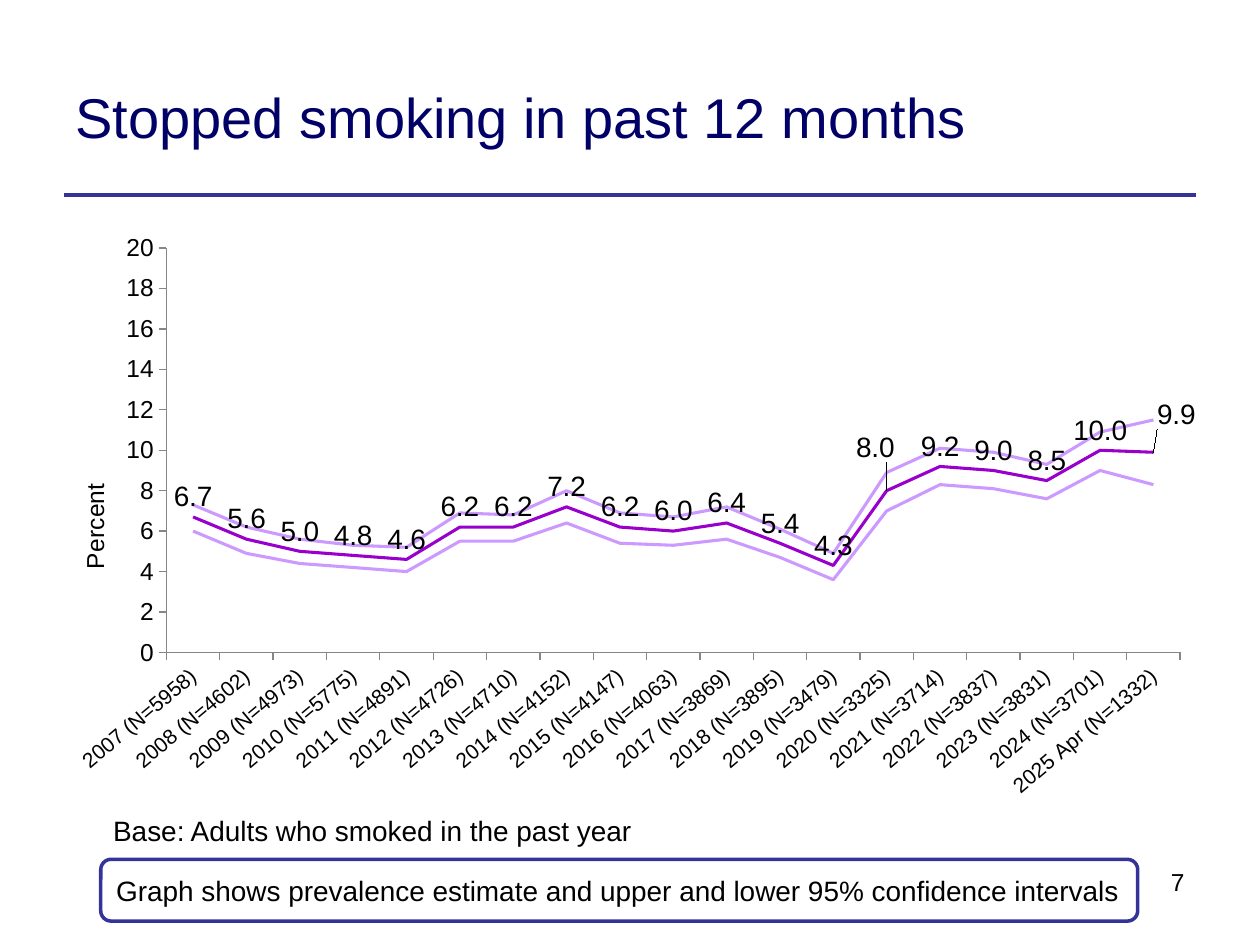
from lxml import etree
from pptx import Presentation
from pptx import util as u
from pptx.chart import data as chart_data
from pptx.dml import color
from pptx.enum import chart as charts, shapes, text
from pptx.oxml import ns

# Content
TITLE = "Stopped smoking in past 12 months"
BASE = "Base: Adults who smoked in the past year"
NOTE = "Graph shows prevalence estimate and upper and lower 95% confidence intervals"
PAGE = "7"
SAMPLES = [5958, 4602, 4973, 5775, 4891, 4726, 4710, 4152, 4147, 4063,
           3869, 3895, 3479, 3325, 3714, 3837, 3831, 3701, 1332]
ESTIMATE = [6.7, 5.6, 5, 4.8, 4.6, 6.2, 6.2, 7.2, 6.2, 6,
            6.4, 5.4, 4.3, 8, 9.2, 9, 8.5, 10, 9.9]
LOWER = [6, 4.9, 4.4, 4.2, 4, 5.5, 5.5, 6.4, 5.4, 5.3,
         5.6, 4.7, 3.6, 7, 8.3, 8.1, 7.6, 9, 8.3]
UPPER = [7.3, 6.2, 5.6, 5.3, 5.2, 6.9, 6.8, 8, 6.9, 6.7,
         7.2, 6.1, 4.9, 8.9, 10.1, 9.9, 9.3, 10.9, 11.5]
SERIES = [("Estimate", ESTIMATE, "estimate"), ("Lower limit", LOWER, "limit"),
          ("Upper limit", UPPER, "limit")]
# Labels nudged off the lines: point index -> share of chart width and height
NUDGED = {13: (-0.01, -0.04), 18: (0.02, -0.03)}

THEME = {
    "font": "Arial",
    "colors": {"title": "000066", "rule": "333399", "text": "000000", "paper": "FFFFFF",
               "estimate": "9900CC", "limit": "CC99FF", "axis": "868686"},
    "sizes": {"title": 32, "body": 16, "axis": 14, "category": 12},
}
WIDTH, HEIGHT = 10, 7.5
LEFT = 0.8


def rgb(name):
    return color.RGBColor.from_string(THEME["colors"][name])


def style(font, size, ink="text"):
    font.name = THEME["font"]
    font.size = u.Pt(THEME["sizes"][size])
    font.color.rgb = rgb(ink)
    font.bold = False


def write(shape, words, size, ink="text", anchor=text.MSO_ANCHOR.TOP,
          align=text.PP_ALIGN.LEFT, wrap=True):
    frame = shape.text_frame
    frame.text = words
    frame.word_wrap = wrap
    frame.vertical_anchor = anchor
    paragraph = frame.paragraphs[0]
    paragraph.alignment = align
    style(paragraph.runs[0].font, size, ink)


def box(*place):
    return slide.shapes.add_textbox(*map(u.Inches, place))


def manual_layout(**values):
    """Chart layout element; keys are the schema's own names."""
    layout = etree.Element(ns.qn("c:layout"))
    manual = etree.SubElement(layout, ns.qn("c:manualLayout"))
    for key, value in values.items():
        etree.SubElement(manual, ns.qn("c:" + key)).set("val", str(value))
    return layout


presentation = Presentation()
presentation.slide_width, presentation.slide_height = u.Inches(WIDTH), u.Inches(HEIGHT)
slide = presentation.slides.add_slide(presentation.slide_layouts[6])

# Title and rule
write(box(0.5, 0.3, 7.89, 1.25), TITLE, "title", "title", text.MSO_ANCHOR.MIDDLE)
rule = slide.shapes.add_connector(shapes.MSO_CONNECTOR.STRAIGHT, u.Inches(0.51),
                                  u.Inches(1.55), u.Inches(WIDTH - 0.51), u.Inches(1.55))
rule.line.color.rgb = rgb("rule")
rule.line.width = u.Pt(2.25)
etree.SubElement(rule._element.spPr, ns.qn("a:effectLst"))

# Chart
figures = chart_data.CategoryChartData()
figures.categories = [f"{year}{' Apr' if year == 2025 else ''} (N={count})"
                      for year, count in enumerate(SAMPLES, 2007)]
for name, values, _ in SERIES:
    figures.add_series(name, values)
chart = slide.shapes.add_chart(charts.XL_CHART_TYPE.LINE, u.Inches(0.5), u.Inches(1.75),
                               u.Inches(9.02), u.Inches(4.66), figures).chart
chart.has_legend = chart.has_title = False
style(chart.font, "body")
plot = chart.plots[0]
plot.vary_by_categories = False
for series, (_, _, ink) in zip(plot.series, SERIES):
    series.smooth = False
    series.marker.style = charts.XL_MARKER_STYLE.NONE
    series.format.line.color.rgb = rgb(ink)
    series.format.line.width = u.Pt(1.75)

plot_area = chart._chartSpace.chart.plotArea
for old in plot_area.findall(ns.qn("c:layout")):
    plot_area.remove(old)
plot_area.insert(0, manual_layout(layoutTarget="inner", xMode="edge", yMode="edge",
                                  x=0.091, y=0.047, w=0.892, h=0.689))

# Data labels on the estimate
estimate = plot.series[0]
labels = estimate.data_labels
labels.show_value = True
labels.number_format, labels.number_format_is_linked = "#,##0.0", False
labels.position = charts.XL_LABEL_POSITION.ABOVE
style(labels.font, "body")
for index, (right, down) in NUDGED.items():
    label = estimate.points[index].data_label
    style(label.font, "body")
    label.position = charts.XL_LABEL_POSITION.ABOVE
    element = estimate._element.xpath(f"c:dLbls/c:dLbl[c:idx/@val='{index}']")[0]
    element.insert(1, manual_layout(x=right, y=down))
    number_format = etree.Element(ns.qn("c:numFmt"), formatCode="#,##0.0", sourceLinked="0")
    element.insert(2, number_format)

# Axes
for axis, size in ((chart.category_axis, "category"), (chart.value_axis, "axis")):
    axis.has_major_gridlines = False
    axis.major_tick_mark = charts.XL_TICK_MARK.OUTSIDE
    axis.minor_tick_mark = charts.XL_TICK_MARK.NONE
    axis.format.line.color.rgb = rgb("axis")
    style(axis.tick_labels.font, size)
category_text = chart.category_axis._element.find(ns.qn("c:txPr"))
category_text.find(ns.qn("a:bodyPr")).set("rot", str(-40 * 60000))
value_axis = chart.value_axis
value_axis.minimum_scale, value_axis.maximum_scale, value_axis.major_unit = 0, 20, 2
value_axis.tick_labels.number_format = "General"
value_axis.tick_labels.number_format_is_linked = False
axis_title = value_axis.axis_title
axis_title.text_frame.text = "Percent"
style(axis_title.text_frame.paragraphs[0].runs[0].font, "axis")
axis_title.text_frame._txBody.find(ns.qn("a:bodyPr")).set("rot", str(-90 * 60000))
for old in axis_title._element.findall(ns.qn("c:layout")):
    axis_title._element.remove(old)
axis_title._element.find(ns.qn("c:tx")).addnext(
    manual_layout(xMode="edge", yMode="edge", x=0.01, y=0.44))

# Page number, note and base
write(box(6.73, 6.83, 2.77, 0.52), PAGE, "axis", align=text.PP_ALIGN.RIGHT)
note = slide.shapes.add_shape(shapes.MSO_SHAPE.ROUNDED_RECTANGLE, u.Inches(LEFT),
                              u.Inches(6.82), u.Inches(8.23), u.Inches(0.49))
note.shadow.inherit = False
note.fill.solid()
note.fill.fore_color.rgb = rgb("paper")
note.line.color.rgb = rgb("rule")
note.line.width = u.Pt(2)
write(note, NOTE, "body", anchor=text.MSO_ANCHOR.MIDDLE)
write(box(LEFT, 6.41, 4.37, 0.37), BASE, "body", wrap=False)

presentation.save("out.pptx")
